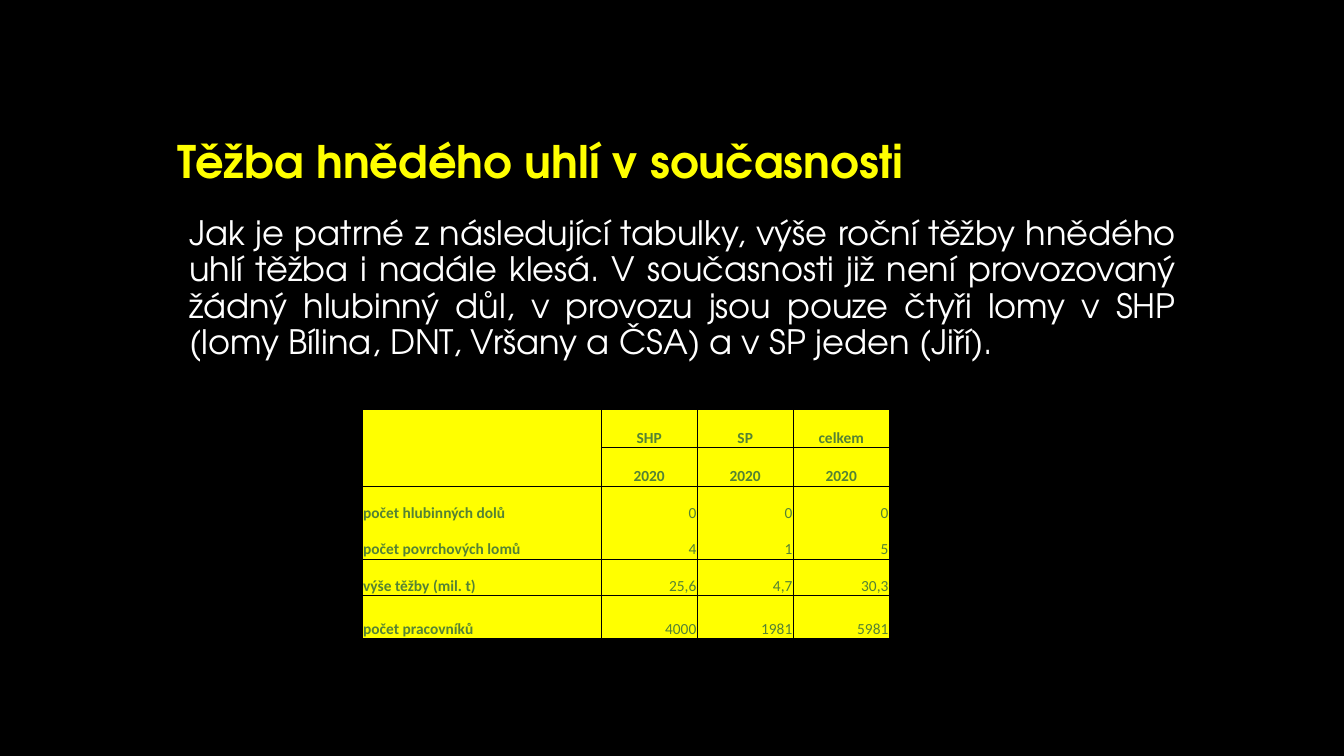
from lxml.etree import SubElement as Sub
from pptx import Presentation
from pptx.dml.color import RGBColor as RGB
from pptx.enum.text import MSO_ANCHOR as Anchor, PP_ALIGN as Align
from pptx.oxml.ns import qn
from pptx.util import Cm, Pt

HEAD = "TeX Gyre Adventor"
YELLOW, GREEN, WHITE, BLACK = "FFFF00", "548235", "FFFFFF", "000000"

TITLE = "Těžba hnědého uhlí v současnosti"
BODY = (
    "Jak je patrné z následující tabulky, výše roční těžby hnědého uhlí "
    "těžba i nadále klesá. V současnosti již není provozovaný žádný hlubinný "
    "důl, v provozu jsou pouze čtyři lomy v SHP (lomy Bílina, DNT, Vršany "
    "a ČSA) a v SP jeden (Jiří)."
)
ROWS = [
    ["", "SHP", "SP", "celkem"],
    ["", "2020", "2020", "2020"],
    ["počet hlubinných dolů", "0", "0", "0"],
    ["počet povrchových lomů", "4", "1", "5"],
    ["výše těžby (mil. t)", "25,6", "4,7", "30,3"],
    ["počet pracovníků", "4000", "1981", "5981"],
]
WIDTHS = [6.02, 2.42, 2.42, 2.42]
HEIGHTS = [0.97, 0.97, 0.92, 0.92, 0.92, 1.09]

# Line widths in points, from the outer left or top edge onwards
UPRIGHT = [1, 0.5, 0.5, 0.5, 1]
LEVEL = [1, 1, 1, 0, 0.5, 0.5, 1]


def paint(item, color):
    item.fill.solid()
    item.fill.fore_color.rgb = RGB.from_string(color)


def style(para, name, size, color, bold=False):
    for run in para.runs:
        font = run.font
        font.name, font.size, font.bold = name, Pt(size), bold
        font.color.rgb = RGB.from_string(color)


def add_text(slide, text, box, size, color, bold, align, anchor):
    frame = slide.shapes.add_textbox(*map(Cm, box)).text_frame
    frame.word_wrap = True
    frame.vertical_anchor = anchor
    frame.text = text
    para = frame.paragraphs[0]
    para.alignment = align
    para.line_spacing = 0.9
    style(para, HEAD, size, color, bold)


def add_edge(cell, side, width):
    line = Sub(cell._tc.get_or_add_tcPr(), qn("a:ln" + side), w=str(Pt(width)))
    if width:
        fill = Sub(line, qn("a:solidFill"))
        Sub(fill, qn("a:srgbClr"), val=BLACK)
    else:
        Sub(line, qn("a:noFill"))


def fill_cell(cell, text, row, col):
    # The empty corner spans two rows without a line between them
    level = LEVEL if col else [1, 0] + LEVEL[2:]
    add_edge(cell, "L", UPRIGHT[col])
    add_edge(cell, "R", UPRIGHT[col + 1])
    add_edge(cell, "T", level[row])
    add_edge(cell, "B", level[row + 1])
    paint(cell, YELLOW)
    cell.margin_left = cell.margin_right = cell.margin_top = Cm(0.02)
    cell.margin_bottom = Cm(0)
    cell.vertical_anchor = Anchor.BOTTOM
    cell.text_frame.text = text
    para = cell.text_frame.paragraphs[0]
    if col:
        para.alignment = Align.CENTER if row < 2 else Align.RIGHT
    style(para, "Calibri", 11, GREEN, row < 2 or col == 0)


def add_grid(slide, left, top):
    size = Cm(sum(WIDTHS)), Cm(sum(HEIGHTS))
    table = slide.shapes.add_table(
        len(ROWS), len(WIDTHS), Cm(left), Cm(top), *size).table
    table.first_row = table.horz_banding = False
    for column, width in zip(table.columns, WIDTHS):
        column.width = Cm(width)
    for line, height in zip(table.rows, HEIGHTS):
        line.height = Cm(height)
    for row, texts in enumerate(ROWS):
        for col, text in enumerate(texts):
            fill_cell(table.cell(row, col), text, row, col)


def main():
    deck = Presentation()
    deck.slide_width, deck.slide_height = Cm(33.87), Cm(19.05)
    slide = deck.slides.add_slide(deck.slide_layouts[6])
    paint(slide.background, BLACK)

    # Heading and paragraph
    add_text(slide, TITLE, (4.22, 1.07, 25.4, 3.81), 32, YELLOW, True,
             Align.LEFT, Anchor.BOTTOM)
    add_text(slide, BODY, (4.52, 5.33, 25.37, 11.43), 24, WHITE, False,
             Align.JUSTIFY, Anchor.TOP)

    # Mining figures
    add_grid(slide, 9.13, 10.31)
    deck.save("out.pptx")


if __name__ == "__main__":
    main()
